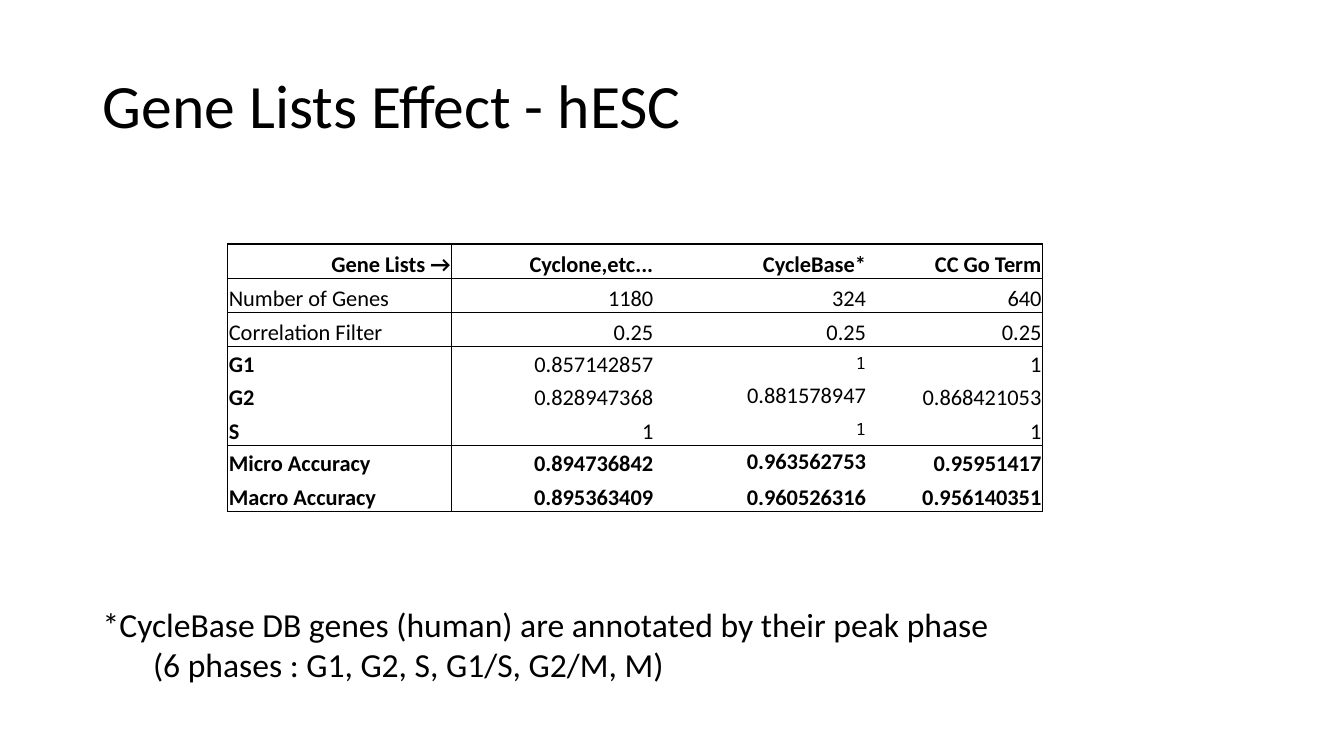
from lxml import etree
from pptx import Presentation
from pptx import util as u
from pptx.dml import color
from pptx.enum import text
from pptx.oxml import ns

BLACK = "000000"
LEFT, RIGHT = text.PP_ALIGN.LEFT, text.PP_ALIGN.RIGHT
BOTTOM, MIDDLE = text.MSO_ANCHOR.BOTTOM, text.MSO_ANCHOR.MIDDLE


def write(paragraph, words, size, bold=False, name="Calibri", align=LEFT):
    run = paragraph.add_run()
    run.text = words
    paragraph.alignment = align
    for key, value in {"size": u.Pt(size), "bold": bold, "name": name}.items():
        setattr(run.font, key, value)
    run.font.color.rgb = color.RGBColor.from_string(BLACK)


def add_border(cell, side, visible):
    line = etree.SubElement(cell._tc.get_or_add_tcPr(), ns.qn(f"a:ln{side}"), w=str(u.Pt(1)))
    if visible:
        fill = etree.SubElement(line, ns.qn("a:solidFill"))
        etree.SubElement(fill, ns.qn("a:srgbClr"), val=BLACK)
    else:
        etree.SubElement(line, ns.qn("a:noFill"))


presentation = Presentation()
presentation.slide_width, presentation.slide_height = u.Inches(13.33), u.Inches(7.5)
slide = presentation.slides.add_slide(presentation.slide_layouts[5])

# Title
title = slide.shapes.title
title.left, title.top = u.Inches(0.92), u.Inches(0.35)
title.width, title.height = u.Inches(11.5), u.Inches(1.45)
title.text_frame.vertical_anchor = MIDDLE
title.text_frame.auto_size = text.MSO_AUTO_SIZE.NONE
title.text_frame.paragraphs[0].line_spacing = 0.9
write(title.text_frame.paragraphs[0], "Gene Lists Effect - hESC", 44)

# Results table
results = [
    ["Gene Lists →", "Cyclone,etc...", "CycleBase*", "CC Go Term"],
    ["Number of Genes", "1180", "324", "640"],
    ["Correlation Filter", "0.25", "0.25", "0.25"],
    ["G1", "0.857142857", "1", "1"],
    ["G2", "0.828947368", "0.881578947", "0.868421053"],
    ["S", "1", "1", "1"],
    ["Micro Accuracy", "0.894736842", "0.963562753", "0.95951417"],
    ["Macro Accuracy", "0.895363409", "0.960526316", "0.956140351"],
]
column_widths = [2.22, 2.01, 2.11, 1.74]
row_heights = [0.34, 0.34, 0.34, 0.32, 0.32, 0.34, 0.32, 0.34]
row_rules = {0, 1, 2, 3, 6, 8}
column_rules = {0, 1, 4}
bold_rows = {0, 6, 7}
phase_rows = {3, 4, 5}

table = slide.shapes.add_table(
    len(results), len(column_widths), u.Inches(2.26), u.Inches(2.42),
    u.Inches(sum(column_widths)), u.Inches(sum(row_heights))).table
table.first_row = table.horz_banding = False
for column, width in zip(table.columns, column_widths):
    column.width = u.Inches(width)
for row, height in zip(table.rows, row_heights):
    row.height = u.Inches(height)

for r, values in enumerate(results):
    for c, value in enumerate(values):
        cell = table.cell(r, c)
        middle = c == 2 and 3 <= r <= 6
        small = middle and value == "1"
        cell_format = {
            "margin_left": u.Inches(0.01), "margin_right": u.Inches(0.01),
            "margin_top": u.Inches(0.01), "margin_bottom": 0,
            "vertical_anchor": MIDDLE if middle else BOTTOM,
        }
        for key, setting in cell_format.items():
            setattr(cell, key, setting)
        write(cell.text_frame.paragraphs[0], value, 12 if small else 16,
              bold=r in bold_rows or (c == 0 and r in phase_rows),
              name="Noto Sans Mono" if middle and r in phase_rows and small else "Calibri",
              align=LEFT if c == 0 and r > 0 else RIGHT)
        add_border(cell, "L", c in column_rules)
        add_border(cell, "R", c + 1 in column_rules)
        add_border(cell, "T", r in row_rules)
        add_border(cell, "B", r + 1 in row_rules)
        cell.fill.background()

# Footnote
footnote = slide.shapes.add_textbox(
    u.Inches(0.92), u.Inches(5.94), u.Inches(11), u.Inches(0.91)).text_frame
footnote.word_wrap = True
footnote.auto_size = text.MSO_AUTO_SIZE.SHAPE_TO_FIT_TEXT
write(footnote.paragraphs[0], "*CycleBase DB genes (human) are annotated by their peak phase", 24)
write(footnote.add_paragraph(), "\t(6 phases : G1, G2, S, G1/S, G2/M, M)", 24)

presentation.save("out.pptx")
